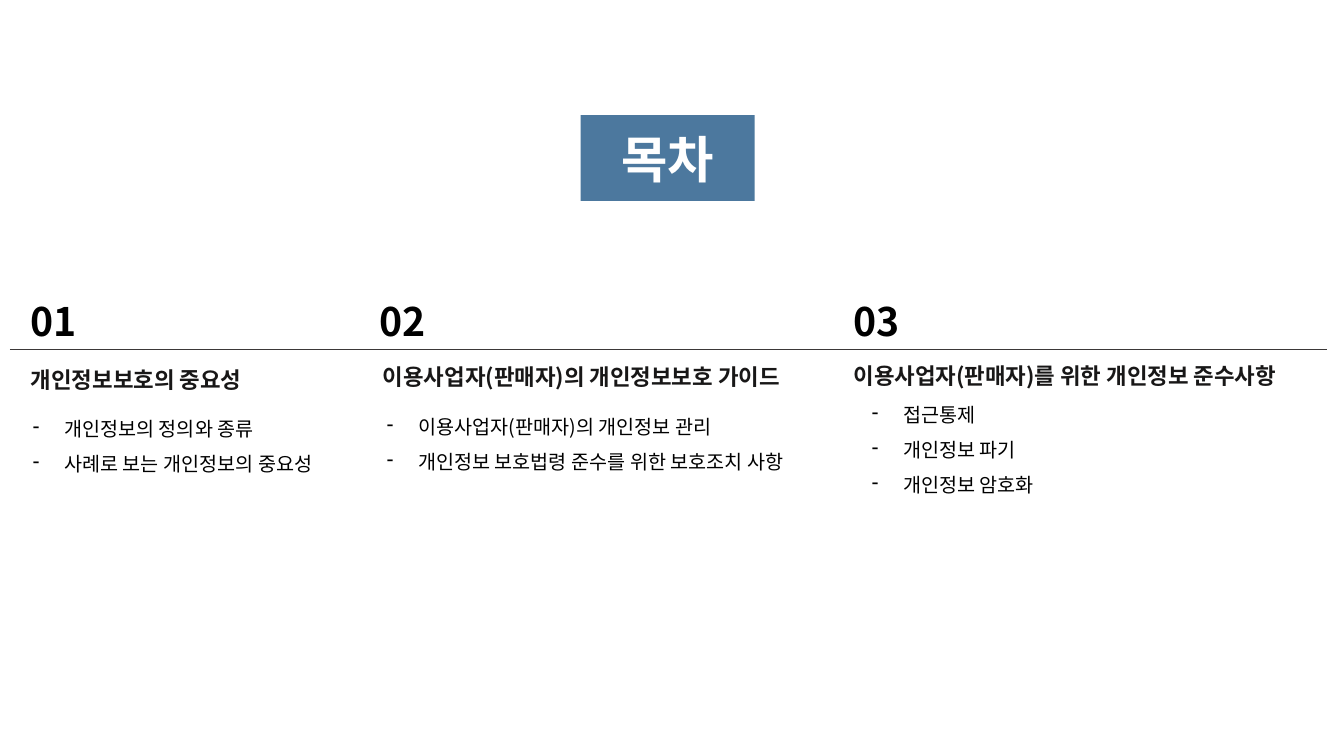
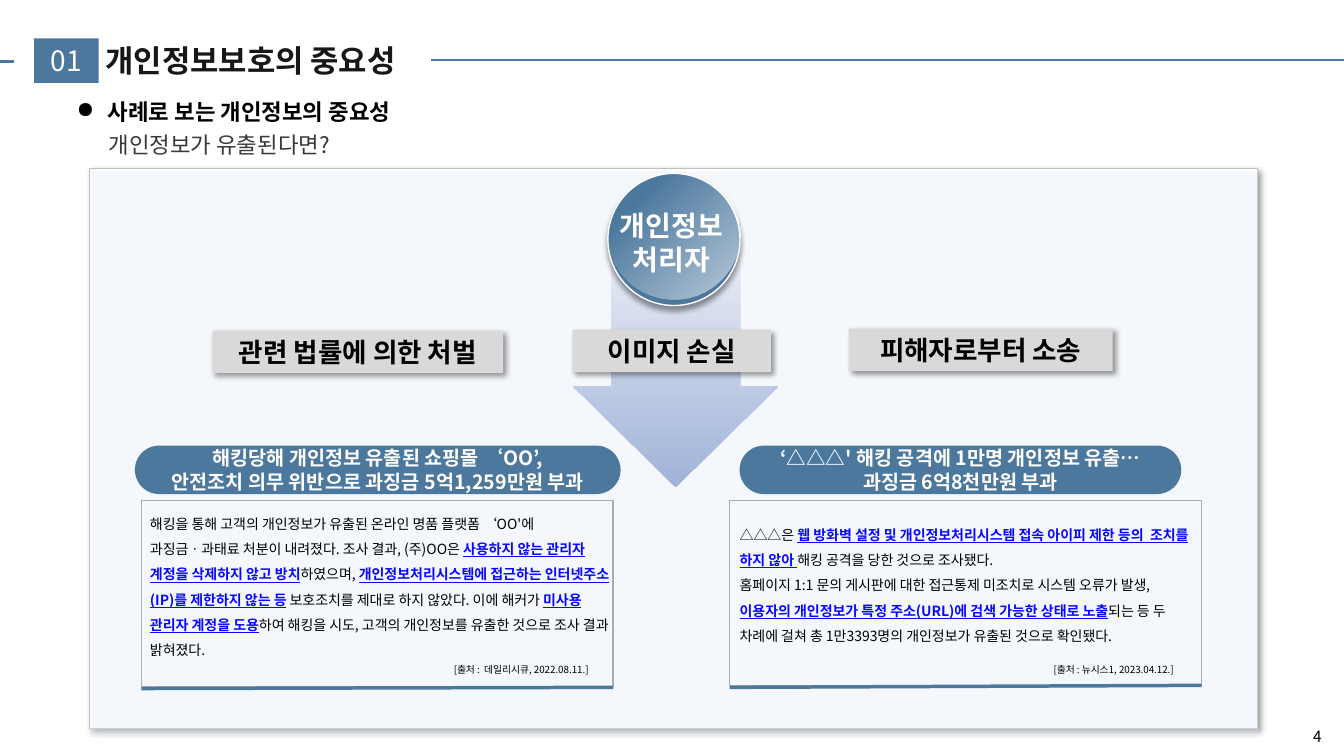
"""Build the contents slide and the data leak case slide."""
from dataclasses import dataclass
from typing import Any, NamedTuple, Optional, Sequence

from lxml.etree import SubElement
from pptx import Presentation
from pptx.dml.color import RGBColor
from pptx.enum.shapes import MSO_CONNECTOR, MSO_SHAPE as Preset
from pptx.enum.text import MSO_ANCHOR as Anchor, MSO_AUTO_SIZE as AutoSize, PP_ALIGN as Align
from pptx.oxml import parse_xml
from pptx.oxml.ns import nsdecls, qn
from pptx.util import Cm, Pt

FONT = "Noto Sans CJK KR"
BLUE, WHITE, BLACK = "4C789E", "FFFFFF", "000000"
INK, DARK, LINK = "181717", "3B3838", "0808FF"
PALE, LABEL_GRAY, EDGE, FRAME = "E3EAF4", "D9D9D9", "BFBFBF", "AFABAB"
SLIDE_WIDTH, SLIDE_HEIGHT = 33.87, 19.05
INDENT = 0.79
Lines = Sequence[Sequence[str]]


class Box(NamedTuple):
    """Place and size in centimetres."""
    left: float
    top: float
    width: float
    height: float


class Style(NamedTuple):
    """Look of a text block; every second run is shown as marked."""
    size: float
    color: str = BLACK
    bold: bool = False
    align: Align = Align.LEFT
    spacing: float = 1.0
    bullet: str = ""
    anchor: Anchor = Anchor.TOP
    wrap: bool = True
    auto_size: AutoSize = AutoSize.SHAPE_TO_FIT_TEXT


class Stop(NamedTuple):
    """Gradient stop in percent."""
    position: int
    color: str
    alpha: int = 100


@dataclass(frozen=True)
class Chapter:
    """Column of the contents slide."""
    number: str
    heading: str
    items: Sequence[str]
    rule: tuple[float, float]
    number_left: float
    heading_box: Box
    items_box: Box


@dataclass(frozen=True)
class Article:
    """News case with headline, framed body and source."""
    headline: Lines
    headline_box: Box
    body: Lines
    body_box: Box
    frame: Box
    rule_ends: tuple[float, float]
    source: str
    source_left: float


TITLE = Style(22, INK, True, spacing=0.9, anchor=Anchor.MIDDLE, auto_size=AutoSize.NONE)
CONTENTS_TITLE = TITLE._replace(size=36, color=WHITE, align=Align.CENTER, spacing=1.0)
NUMBER = Style(28, bold=True, wrap=False)
HEADING = Style(16, INK, True, wrap=False)
ITEMS = Style(14, spacing=1.5, bullet="-")
TOPIC = Style(16, bold=True, bullet="●", wrap=False)
QUESTION = Style(16, DARK, anchor=Anchor.MIDDLE, auto_size=AutoSize.NONE)
LABEL = Style(19, BLACK, True, Align.CENTER, anchor=Anchor.MIDDLE, auto_size=AutoSize.NONE)
TAG = LABEL._replace(size=20, color=WHITE, bold=False)
HEADLINE = LABEL._replace(size=14, color=WHITE, wrap=False)
HANDLER = Style(20, WHITE, True, Align.CENTER)
BODY = Style(10, spacing=1.5)
SOURCE = Style(7, align=Align.CENTER)
PAGE = Style(11)

CHAPTERS = (
    Chapter("02", "이용사업자(판매자)의 개인정보보호 가이드",
            ("이용사업자(판매자)의 개인정보 관리", "개인정보 보호법령 준수를 위한 보호조치 사항"),
            (8.41, 20.32), 9.32, Box(9.4, 9.02, 11.58, 0.94), Box(9.5, 10.03, 11.58, 1.93)),
    Chapter("01", "개인정보보호의 중요성",
            ("개인정보의 정의와 종류", "사례로 보는 개인정보의 중요성"),
            (0.25, 10.03), 0.53, Box(0.53, 9.09, 6.4, 0.94), Box(0.58, 10.08, 8.28, 1.96)),
    Chapter("03", "이용사업자(판매자)를 위한 개인정보 준수사항",
            ("접근통제", "개인정보 파기", "개인정보 암호화"),
            (18.87, 33.45), 21.26, Box(21.26, 8.99, 12.34, 0.94), Box(21.72, 9.73, 8.28, 2.84)),
)

LABELS = (
    ("관련 법률에 의한 처벌", Box(5.36, 8.33, 7.32, 1.07)),
    ("피해자로부터 소송", Box(21.39, 8.28, 6.65, 1.07)),
    ("이미지 손실", Box(14.43, 8.31, 5.0, 1.07)),
)

ARTICLES = (
    Article(
        (("해킹당해 개인정보 유출된 쇼핑몰 ‘OO’,",),
         ("안전조치 의무 위반으로 과징금 5억1,259만원 부과",)),
        Box(3.4, 11.23, 12.24, 1.22),
        (("해킹을 통해 고객의 개인정보가 유출된 온라인 명품 플랫폼 ‘OO'에 "
          "과징금ㆍ과태료 처분이 내려졌다. 조사 결과, (주)OO은 ",
          "사용하지 않는 관리자 계정을 삭제하지 않고 방치",
          "하였으며, ",
          "개인정보처리시스템에 접근하는 인터넷주소(IP)를 제한하지 않는 등",
          " 보호조치를 제대로 하지 않았다. 이에 해커가 ",
          "미사용 관리자 계정을 도용",
          "하여 해킹을 시도, 고객의 개인정보를 유출한 것으로 조사 결과 밝혀졌다."),),
        Box(3.53, 12.65, 12.07, 4.01), Box(3.56, 12.62, 11.89, 4.67), (17.35, 17.32),
        "[출처 :  데일리시큐, 2022.08.11.]", 9.96),
    Article(
        (("‘△△△' 해킹 공격에 1만명 개인정보 유출…",), ("과징금 6억8천만원 부과",)),
        Box(18.64, 11.23, 11.13, 1.22),
        (("△△△은 ",
          "웹 방화벽 설정 및 개인정보처리시스템 접속 아이피 제한 등의  조치를 하지 않아 ",
          "해킹 공격을 당한 것으로 조사됐다."),
         ("홈페이지 1:1 문의 게시판에 대한 접근통제 미조치로 시스템 오류가 발생, ",
          "이용자의 개인정보가 특정 주소(URL)에 검색 가능한 상태로 노출",
          "되는 등 두 차례에 걸쳐 총 1만3393명의 개인정보가 유출된 것으로 확인됐다.")),
        Box(18.39, 12.93, 12.17, 3.38), Box(18.39, 12.62, 11.89, 4.65), (17.32, 17.27),
        "[출처 : 뉴시스1, 2023.04.12.]", 24.89),
)


def rgb(color: str) -> RGBColor:
    """Turn a hex string into a colour."""
    return RGBColor.from_string(color)


def set_all(target: Any, values: dict[str, Any]) -> None:
    """Set every attribute named in the dict."""
    for name, value in values.items():
        setattr(target, name, value)


def lengths(box: Box) -> list[Cm]:
    """Give the box as slide lengths."""
    return [Cm(value) for value in box]


def write_text(shape: Any, lines: Lines, style: Style) -> None:
    """Fill a shape with styled paragraphs."""
    frame = shape.text_frame
    set_all(frame, {"word_wrap": style.wrap, "auto_size": style.auto_size,
                    "vertical_anchor": style.anchor})
    for index, runs in enumerate(lines):
        paragraph = frame.add_paragraph() if index else frame.paragraphs[0]
        set_all(paragraph, {"alignment": style.align, "line_spacing": style.spacing})
        if style.bullet:
            properties = paragraph._p.get_or_add_pPr()
            properties.set("marL", str(Cm(INDENT)))
            properties.set("indent", str(-Cm(INDENT)))
            SubElement(properties, qn("a:buChar"), char=style.bullet)
        for position, text in enumerate(runs):
            marked = position % 2 == 1
            run = paragraph.add_run()
            run.text = text
            set_all(run.font, {"name": FONT, "size": Pt(style.size),
                               "bold": style.bold or marked, "underline": marked})
            run.font.color.rgb = rgb(LINK if marked else style.color)
            SubElement(run._r.get_or_add_rPr(), qn("a:ea"), typeface=FONT)


def add_text(slide: Any, box: Box, lines: Lines, style: Style) -> None:
    """Add a text box."""
    write_text(slide.shapes.add_textbox(*lengths(box)), lines, style)


def add_line(slide: Any, start: tuple[float, float], end: tuple[float, float],
             color: str, width: float) -> None:
    """Add a straight line without shadow."""
    line = slide.shapes.add_connector(
        MSO_CONNECTOR.STRAIGHT, *(Cm(value) for value in (*start, *end)))
    line.line.color.rgb = rgb(color)
    line.line.width = Pt(width)
    SubElement(line._element.spPr, qn("a:effectLst"))


def add_shape(slide: Any, preset: Preset, box: Box, fill: Optional[str] = None,
              line: Optional[tuple[str, float]] = None, shadow_angle: Optional[int] = None,
              adjustments: Sequence[float] = ()) -> Any:
    """Add a preset shape with its fill, outline and shadow."""
    shape = slide.shapes.add_shape(preset, *lengths(box))
    shape.shadow.inherit = False
    for index, value in enumerate(adjustments):
        shape.adjustments[index] = value
    if fill:
        shape.fill.solid()
        shape.fill.fore_color.rgb = rgb(fill)
    else:
        shape.fill.background()
    if line:
        shape.line.color.rgb = rgb(line[0])
        shape.line.width = Pt(line[1])
    else:
        shape.line.fill.background()
    if shadow_angle is not None:
        effects = shape._element.spPr.find(qn("a:effectLst"))
        shadow = SubElement(effects, qn("a:outerShdw"), blurRad=str(Pt(4)), dist=str(Pt(3)),
                            dir=str(shadow_angle * 60000), algn="ctr", rotWithShape="0")
        color = SubElement(shadow, qn("a:srgbClr"), val=BLACK)
        SubElement(color, qn("a:alpha"), val="40000")
    return shape


def set_gradient(shape: Any, stops: Sequence[Stop], direction: str) -> None:
    """Replace an empty fill by a gradient."""
    stop_xml = "".join(
        f'<a:gs pos="{stop.position * 1000}"><a:srgbClr val="{stop.color}">'
        f'<a:alpha val="{stop.alpha * 1000}"/></a:srgbClr></a:gs>' for stop in stops)
    gradient = parse_xml(f'<a:gradFill {nsdecls("a")} rotWithShape="1">'
                         f'<a:gsLst>{stop_xml}</a:gsLst>{direction}</a:gradFill>')
    properties = shape._element.spPr
    properties.replace(properties.find(qn("a:noFill")), gradient)


def add_titled_slide(presentation: Any, title: str, box: Box, style: Style) -> Any:
    """Add a title-only slide and format its title."""
    slide = presentation.slides.add_slide(presentation.slide_layouts[5])
    set_all(slide.shapes.title, dict(zip(("left", "top", "width", "height"), lengths(box))))
    write_text(slide.shapes.title, ((title,),), style)
    return slide


def build_contents(presentation: Any) -> None:
    """Build the contents slide."""
    slide = add_titled_slide(presentation, "목차", Box(14.63, 2.9, 4.39, 2.16), CONTENTS_TITLE)
    slide.shapes.title.fill.solid()
    slide.shapes.title.fill.fore_color.rgb = rgb(BLUE)
    for chapter in CHAPTERS:
        start, end = chapter.rule
        add_line(slide, (start, 8.81), (end, 8.81), DARK, 1)
        add_text(slide, Box(chapter.number_left, 7.37, 1.68, 1.45), ((chapter.number,),), NUMBER)
        add_text(slide, chapter.heading_box, ((chapter.heading,),), HEADING)
        add_text(slide, chapter.items_box, [(item,) for item in chapter.items], ITEMS)


def add_article(slide: Any, article: Article) -> None:
    """Draw one news case."""
    pill = add_shape(slide, Preset.ROUNDED_RECTANGLE, article.headline_box, BLUE,
                     adjustments=(0.5,))
    write_text(pill, article.headline, HEADLINE)
    frame = article.frame
    add_shape(slide, Preset.RECTANGLE, frame, line=(FRAME, 0))
    start, end = article.rule_ends
    add_line(slide, (frame.left, start), (frame.left + frame.width, end), BLUE, 2.5)
    add_text(slide, article.body_box, article.body, BODY)
    add_text(slide, Box(article.source_left, 16.59, 6.35, 0.56), ((article.source,),), SOURCE)


def add_handler(slide: Any) -> None:
    """Draw the glossy circle of the data handler."""
    add_shape(slide, Preset.OVAL, Box(15.32, 4.37, 3.33, 3.33), BLUE, (WHITE, 1), 90)
    gloss = add_shape(slide, Preset.OVAL, Box(15.32, 4.22, 3.33, 3.33))
    gloss.rotation = 210
    set_gradient(gloss, (Stop(0, WHITE, 0), Stop(4, WHITE, 72), Stop(69, WHITE, 0),
                         Stop(100, WHITE, 0)),
                 '<a:path path="circle"><a:fillToRect l="100000" t="100000"/></a:path>')
    add_text(slide, Box(15.21, 5.13, 3.43, 1.96), (("개인정보",), ("처리자",)), HANDLER)


def build_case(presentation: Any) -> None:
    """Build the data leak case slide."""
    slide = add_titled_slide(presentation, "개인정보보호의 중요성",
                             Box(2.41, 0.97, 10.21, 1.19), TITLE)
    add_text(slide, Box(1.68, 2.34, 9.32, 0.94), (("사례로 보는 개인정보의 중요성",),), TOPIC)
    tag = add_shape(slide, Preset.RECTANGLE, Box(0.86, 0.97, 1.63, 1.12), BLUE)
    write_text(tag, (("01",),), TAG)
    add_line(slide, (10.87, 1.52), (SLIDE_WIDTH, 1.52), BLUE, 1.5)
    add_line(slide, (0, 1.55), (0.36, 1.55), BLUE, 1.5)
    add_shape(slide, Preset.RECTANGLE, Box(2.26, 4.24, 29.44, 14.12), WHITE, (EDGE, 0.5), 45)
    add_text(slide, Box(2.49, 3.18, 6.43, 0.91), (("개인정보가 유출된다면?",),), QUESTION)
    panel = add_shape(slide, Preset.RECTANGLE, Box(2.26, 4.32, 29.44, 14.25), PALE)
    panel_color = panel._element.spPr.find(qn("a:solidFill")).find(qn("a:srgbClr"))
    SubElement(panel_color, qn("a:alpha"), val="36000")
    arrow = add_shape(slide, Preset.DOWN_ARROW, Box(14.45, 5.23, 5.16, 7.04),
                      adjustments=(0.63, 0.49))
    set_gradient(arrow, (Stop(0, "F5F7FB"), Stop(100, "A0B3D8")),
                 '<a:lin ang="5400000" scaled="0"/>')
    for text, box in LABELS:
        label = add_shape(slide, Preset.RECTANGLE, box, LABEL_GRAY, shadow_angle=45)
        write_text(label, ((text,),), LABEL)
    add_handler(slide)
    for article in ARTICLES:
        add_article(slide, article)
    add_text(slide, Box(32.84, 18.21, 1.02, 0.74), (("4",),), PAGE)


def main() -> None:
    """Build and save the presentation."""
    presentation = Presentation()
    set_all(presentation, {"slide_width": Cm(SLIDE_WIDTH), "slide_height": Cm(SLIDE_HEIGHT)})
    build_contents(presentation)
    build_case(presentation)
    presentation.save("out.pptx")


if __name__ == "__main__":
    main()
